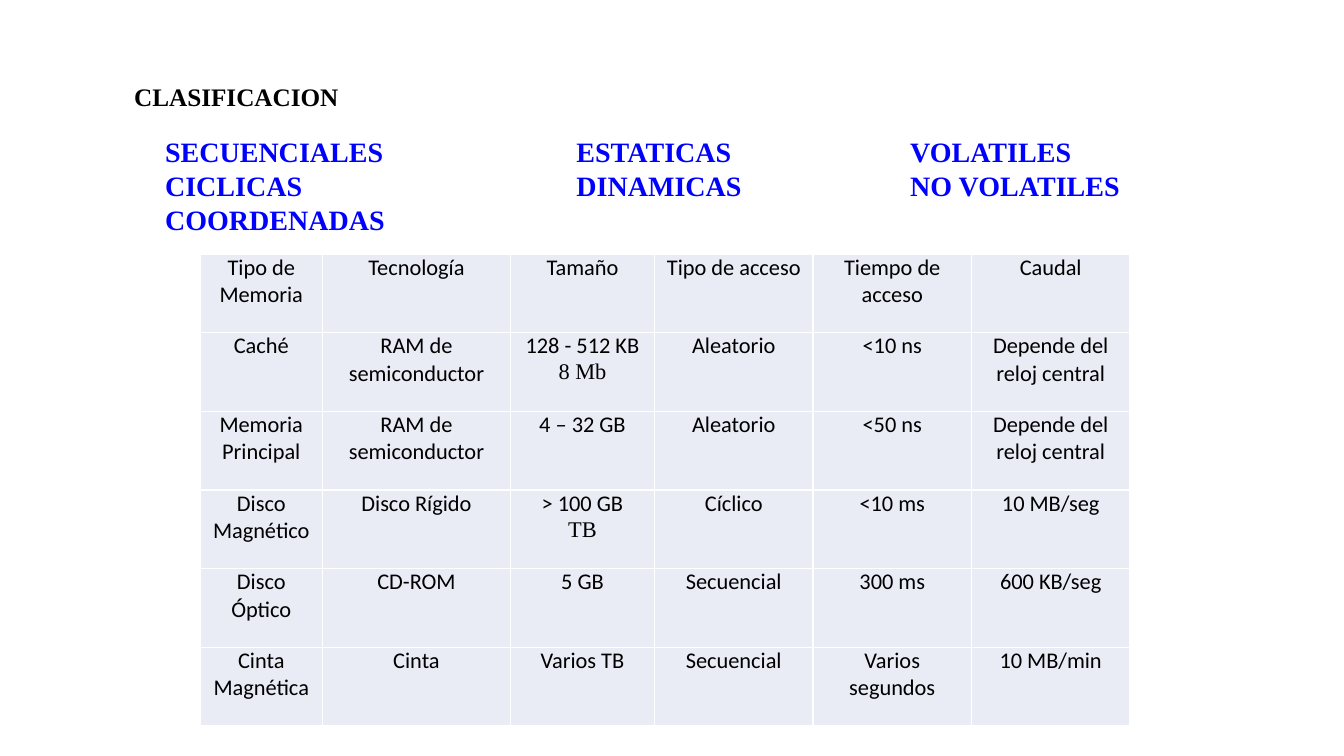
from dataclasses import dataclass

from lxml.etree import SubElement
from pptx import Presentation
from pptx.dml.color import RGBColor as RGB
from pptx.enum.text import MSO_ANCHOR as Anchor, MSO_AUTO_SIZE as AutoSize, PP_ALIGN as Align
from pptx.oxml.ns import qn
from pptx.slide import Slide
from pptx.table import _Cell as Cell
from pptx.text.text import TextFrame
from pptx.util import Pt

COLORS = {"text": "000000", "list": "0000FF", "cell": "E9EBF5", "border": "FFFFFF"}
SERIF, SANS = "Times New Roman", "Calibri"


@dataclass
class Category:
    left: float
    width: float
    height: float
    margin: float
    indent: float
    items: list[str]


CATEGORIES = [
    Category(61.2, 480, 80, 64, -14.4, ["SECUENCIALES", "CICLICAS", "COORDENADAS"]),
    Category(376.6, 206.6, 55.4, 49.7, -21.6, ["ESTATICAS", "DINAMICAS"]),
    Category(614.9, 221.8, 55.4, 49.7, -21.6, ["VOLATILES", "NO VOLATILES"]),
]
CATEGORY_TOP = 92.9

TABLE_LEFT, TABLE_TOP, ROW_HEIGHT = 142.9, 181.4, 56.2
COLUMN_WIDTHS = [87.5, 134.2, 103, 113.2, 113.2, 113.2]
MEMORIES = [
    ["Tipo de Memoria", "Tecnología", "Tamaño", "Tipo de acceso", "Tiempo de acceso", "Caudal"],
    ["Caché", "RAM de semiconductor", "128 - 512 KB\n8 Mb", "Aleatorio", "<10 ns",
     "Depende del reloj central"],
    ["Memoria Principal", "RAM de semiconductor", "4 – 32 GB", "Aleatorio", "<50 ns",
     "Depende del reloj central"],
    ["Disco Magnético", "Disco Rígido", "> 100 GB\nTB", "Cíclico", "<10 ms", "10 MB/seg"],
    ["Disco Óptico", "CD-ROM", "5 GB", "Secuencial", "300 ms", "600 KB/seg"],
    ["Cinta Magnética", "Cinta", "Varios TB", "Secuencial", "Varios segundos", "10 MB/min"],
]


def write(tf: TextFrame, text: str, *, size: float, font: str, color: str,
          bold: bool = False, align: Align = Align.LEFT, next_font: str | None = None,
          margin: float = 0, indent: float = 0) -> None:
    for i, line in enumerate(text.split("\n")):
        p = tf.add_paragraph() if i else tf.paragraphs[0]
        p.alignment = align
        if margin:
            pPr = p._p.get_or_add_pPr()
            pPr.set("marL", str(Pt(margin)))
            pPr.set("indent", str(Pt(indent)))
        r = p.add_run()
        r.text = line
        r.font.size = Pt(size)
        r.font.name = next_font if i and next_font else font
        r.font.bold = bold
        r.font.color.rgb = RGB.from_string(COLORS[color])


def add_title(s: Slide) -> None:
    title = s.shapes.title
    title.left, title.top, title.width, title.height = Pt(88.6), Pt(54.7), Pt(162), Pt(28.8)
    tf = title.text_frame
    tf.word_wrap = False
    tf.auto_size = AutoSize.SHAPE_TO_FIT_TEXT
    tf.vertical_anchor = Anchor.TOP
    write(tf, "CLASIFICACION", size=18, font=SERIF, color="text", bold=True)


def add_category(s: Slide, category: Category) -> None:
    box = s.shapes.add_textbox(Pt(category.left), Pt(CATEGORY_TOP),
                               Pt(category.width), Pt(category.height))
    tf = box.text_frame
    tf.word_wrap = True
    tf.auto_size = AutoSize.SHAPE_TO_FIT_TEXT
    write(tf, "\n".join(category.items), size=20, font=SERIF, color="list", bold=True,
          align=Align.JUSTIFY, margin=category.margin, indent=category.indent)


def add_borders(cell: Cell) -> None:
    tcPr = cell._tc.get_or_add_tcPr()
    for side in ("lnL", "lnR", "lnT", "lnB"):
        ln = SubElement(tcPr, qn(f"a:{side}"), w=str(Pt(1)))
        fill = SubElement(ln, qn("a:solidFill"))
        SubElement(fill, qn("a:srgbClr"), val=COLORS["border"])


def add_memory_table(s: Slide) -> None:
    table = s.shapes.add_table(len(MEMORIES), len(COLUMN_WIDTHS), Pt(TABLE_LEFT), Pt(TABLE_TOP),
                               Pt(sum(COLUMN_WIDTHS)), Pt(ROW_HEIGHT * len(MEMORIES))).table
    table.first_row = table.horz_banding = False
    for column, width in zip(table.columns, COLUMN_WIDTHS):
        column.width = Pt(width)
    for row, texts in zip(table.rows, MEMORIES):
        row.height = Pt(ROW_HEIGHT)
        for cell, text in zip(row.cells, texts):
            cell.margin_left = cell.margin_right = Pt(5)
            cell.margin_top = cell.margin_bottom = Pt(0)
            add_borders(cell)
            cell.fill.solid()
            cell.fill.fore_color.rgb = RGB.from_string(COLORS["cell"])
            write(cell.text_frame, text, size=16, font=SANS, color="text",
                  align=Align.CENTER, next_font=SERIF)


def main() -> None:
    prs = Presentation()
    prs.slide_width, prs.slide_height = Pt(960), Pt(540)
    s = prs.slides.add_slide(prs.slide_layouts.get_by_name("Title Only"))
    add_title(s)
    for category in CATEGORIES:
        add_category(s, category)
    add_memory_table(s)
    prs.save("out.pptx")


if __name__ == "__main__":
    main()
